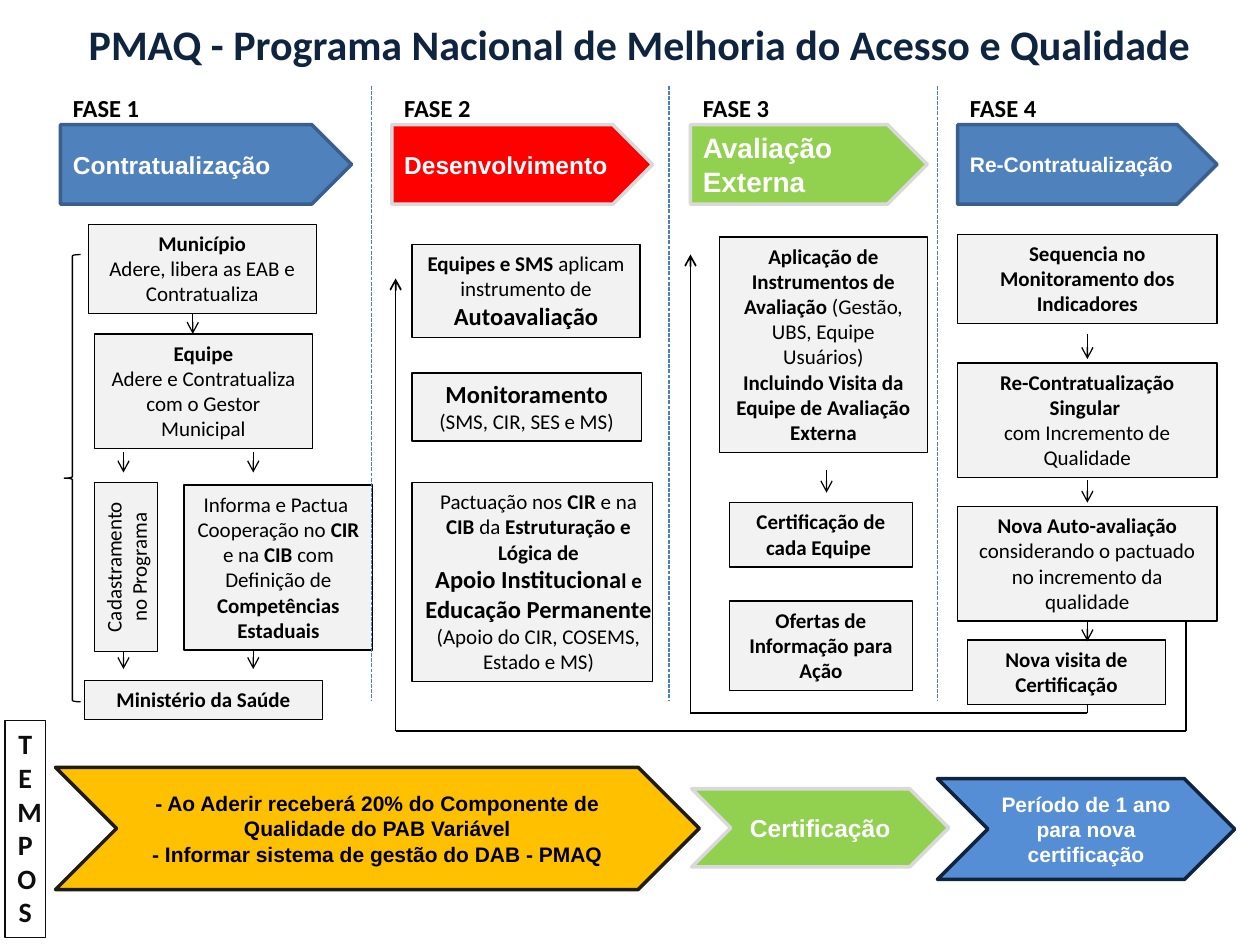
from itertools import pairwise

from lxml.etree import SubElement
from pptx import Presentation
from pptx.dml.color import RGBColor
from pptx.enum.dml import MSO_LINE
from pptx.enum.shapes import MSO_CONNECTOR, MSO_SHAPE
from pptx.enum.text import MSO_ANCHOR, MSO_AUTO_SIZE, PP_ALIGN
from pptx.oxml.ns import qn
from pptx.util import Inches, Pt

BLACK = RGBColor(0x00, 0x00, 0x00)
NEAR_BLACK = RGBColor(0x0D, 0x0D, 0x0D)
WHITE = RGBColor(0xFF, 0xFF, 0xFF)
PALE_GRAY = RGBColor(0xF2, 0xF2, 0xF2)
EDGE_GRAY = RGBColor(0xD9, 0xD9, 0xD9)
NAVY = RGBColor(0x0F, 0x24, 0x3E)
BLUE = RGBColor(0x4F, 0x81, 0xBD)
EDGE_BLUE = RGBColor(0x3A, 0x5F, 0x8C)
DASH_BLUE = RGBColor(0x4B, 0x7E, 0xBC)
SKY_BLUE = RGBColor(0x55, 0x8E, 0xD5)
RED = RGBColor(0xFF, 0x00, 0x00)
GREEN = RGBColor(0x92, 0xD0, 0x50)
AMBER = RGBColor(0xFF, 0xC0, 0x00)
EDGE_BROWN = RGBColor(0x1E, 0x1C, 0x11)


def bold(text, size=12):
    return text, True, size


def plain(text, size=12):
    return text, False, size


class SlideBuilder:
    body_font = "Calibri"
    arrow_font = "Arial"
    thin = 0.75

    def __init__(self, slide):
        self.slide = slide

    def add_text(self, shape, paragraphs, font, color, align=PP_ALIGN.CENTER):
        """Fill a shape with paragraphs, each a list of (text, bold, size) runs."""
        frame = shape.text_frame
        for index, runs in enumerate(paragraphs):
            paragraph = frame.add_paragraph() if index else frame.paragraphs[0]
            paragraph.alignment = align
            paragraph.font.name = font
            paragraph.font.color.rgb = color
            same_weight = len({run[1] for run in runs}) == 1
            same_size = len({run[2] for run in runs}) == 1
            if same_weight:
                paragraph.font.bold = runs[0][1]
            if same_size:
                paragraph.font.size = Pt(runs[0][2])
            for text, is_bold, size in runs:
                run = paragraph.add_run()
                run.text = text
                if not same_weight:
                    run.font.bold = is_bold
                if not same_size:
                    run.font.size = Pt(size)

    def shape(self, kind, area, fill, edge, width):
        shape = self.slide.shapes.add_shape(kind, *map(Inches, area))
        shape.shadow.inherit = False
        if fill is None:
            shape.fill.background()
        else:
            shape.fill.solid()
            shape.fill.fore_color.rgb = fill
        shape.line.color.rgb = edge
        shape.line.width = Pt(width)
        return shape

    def box(self, area, *paragraphs, fill=PALE_GRAY, color=BLACK):
        shape = self.shape(MSO_SHAPE.RECTANGLE, area, fill, color, self.thin)
        shape.text_frame.vertical_anchor = MSO_ANCHOR.TOP
        shape.text_frame.word_wrap = True
        shape.text_frame.auto_size = MSO_AUTO_SIZE.SHAPE_TO_FIT_TEXT
        self.add_text(shape, paragraphs, self.body_font, color)
        return shape

    def block_arrow(self, kind, area, fill, edge, *paragraphs, color=WHITE, align=PP_ALIGN.CENTER):
        shape = self.shape(kind, area, fill, edge, 2)
        shape.text_frame.word_wrap = True
        self.add_text(shape, paragraphs, self.arrow_font, color, align)

    def label(self, area, run, color=BLACK, align=PP_ALIGN.LEFT, wrap=False):
        shape = self.slide.shapes.add_textbox(*map(Inches, area))
        shape.text_frame.word_wrap = wrap
        shape.text_frame.auto_size = MSO_AUTO_SIZE.SHAPE_TO_FIT_TEXT
        self.add_text(shape, [[run]], self.body_font, color, align)

    def line(self, start, end, color=BLACK, width=thin, arrow=False, dashed=False):
        connector = self.slide.shapes.add_connector(
            MSO_CONNECTOR.STRAIGHT, *map(Inches, (*start, *end)))
        connector.line.color.rgb = color
        connector.line.width = Pt(width)
        if dashed:
            connector.line.dash_style = MSO_LINE.SQUARE_DOT
        properties = connector._element.spPr
        if arrow:
            SubElement(properties.find(qn("a:ln")), qn("a:tailEnd"), type="arrow")
        SubElement(properties, qn("a:effectLst"))
        return connector

    def down_arrow(self, x, top, bottom):
        return self.line((x, top), (x, bottom), arrow=True)

    def return_route(self, *points):
        """Draw a bent route whose last leg carries the arrowhead."""
        for start, end in pairwise(points):
            self.line(start, end, width=1, arrow=end == points[-1])


def main():
    presentation = Presentation()
    presentation.slide_width, presentation.slide_height = Inches(10), Inches(7.5)
    builder = SlideBuilder(presentation.slides.add_slide(presentation.slide_layouts[6]))

    builder.label((0.35, 0.1, 9.45, 0.51),
                  bold("PMAQ - Programa Nacional de Melhoria do Acesso e Qualidade", 24),
                  NAVY, PP_ALIGN.CENTER, wrap=True)

    phases = [
        (0.48, 2.31, BLUE, EDGE_BLUE, "Contratualização", 14),
        (3.11, 2.07, RED, EDGE_GRAY, "Desenvolvimento", 14),
        (5.48, 1.88, GREEN, EDGE_GRAY, "Avaliação Externa", 16),
        (7.6, 2.06, BLUE, EDGE_BLUE, "Re-Contratualização", 12),
    ]
    for number, (left, width, fill, edge, name, size) in enumerate(phases, 1):
        builder.label((left, 0.69, 0.73, 0.34), bold(f"FASE {number}", 14))
        builder.block_arrow(MSO_SHAPE.PENTAGON, (left, 0.99, width, 0.63), fill, edge,
                            [bold(name, size)], align=PP_ALIGN.LEFT)

    builder.return_route((9.41, 4.86), (9.41, 5.8), (3.14, 5.8), (3.14, 2.21))
    builder.return_route((8.63, 5.58), (8.63, 5.66), (5.48, 5.66), (5.48, 2.02))

    # Fase 1
    builder.shape(MSO_SHAPE.LEFT_BRACE, (0.51, 2.02, 0.13, 3.55), None, BLACK, builder.thin)
    builder.box((0.7, 1.78, 1.81, 0.71), [bold("Município")],
                [plain("Adere, libera as EAB e Contratualiza")])
    builder.box((0.75, 2.65, 1.73, 0.91), [bold("Equipe")],
                [plain("Adere e Contratualiza com o Gestor Municipal")])
    registration = builder.box((0.33, 4.25, 1.34, 0.5), [plain("Cadastramento no Programa")])
    registration.rotation = 270
    builder.box((1.46, 3.85, 1.5, 1.31),
                [plain("Informa e Pactua  Cooperação no "), bold("CIR "), plain("e na "),
                 bold("CIB "), plain("com Definição de "), bold("Competências Estaduais")])
    builder.box((0.67, 5.4, 1.89, 0.31), [bold("Ministério da Saúde")])
    builder.down_arrow(1.53, 2.49, 2.65)
    for x in (0.98, 2.01):
        builder.down_arrow(x, 3.59, 3.75)
        builder.down_arrow(x, 5.17, 5.31)

    # Fase 2
    builder.box((3.27, 1.94, 1.81, 0.74),
                [bold("Equipes e SMS "), plain("aplicam instrumento de")],
                [bold("Autoavaliação", 14)])
    builder.box((3.27, 2.96, 1.82, 0.54), [bold("Monitoramento", 14)],
                [plain("(SMS, CIR, SES e MS)")])
    agreement = builder.box(
        (3.27, 3.83, 1.91, 1.58),
        [plain("Pactuação nos "), bold("CIR "), plain("e na "), bold("CIB "), plain("da"),
         bold(" Estruturação e Lógica de")],
        [bold("Apoio Instituciona", 14), bold("l e "), bold("Educação Permanente", 14)],
        [plain("(Apoio do CIR, COSEMS, Estado e MS)")])
    agreement.text_frame.margin_right = 0

    # Fase 3
    builder.box((5.71, 1.88, 1.65, 1.71),
                [bold("Aplicação de Instrumentos de Avaliação "),
                 plain("(Gestão, UBS, Equipe Usuários)")],
                [bold("Incluindo Visita da Equipe de Avaliação Externa")])
    builder.box((5.79, 3.99, 1.45, 0.51), [bold("Certificação de cada Equipe ")])
    builder.box((5.79, 4.77, 1.45, 0.71), [bold("Ofertas de Informação para Ação")])
    builder.down_arrow(6.56, 3.73, 3.91)

    # Fase 4
    builder.box((7.6, 1.86, 2.06, 0.71), [bold("Sequencia no Monitoramento dos Indicadores")])
    builder.box((7.6, 2.88, 2.06, 0.91), [bold("Re-Contratualização Singular ")],
                [plain("com Incremento de Qualidade")])
    self_assessment = builder.box(
        (7.6, 4.02, 2.06, 0.91),
        [bold("Nova Auto-avaliação "),
         plain("considerando o pactuado no incremento da qualidade")])
    builder.box((7.68, 5.08, 1.57, 0.51), [bold("Nova visita de Certificação")])
    builder.down_arrow(8.63, 2.65, 2.85)
    builder.down_arrow(8.63, 3.81, 3.99)
    builder.down_arrow(8.63, 4.93, 5.09).begin_connect(self_assessment, 2)

    for x in (2.95, 5.31, 7.44):
        builder.line((x, 0.68), (x, 5.56), DASH_BLUE, dashed=True)

    # Tempos
    builder.box((0.04, 5.72, 0.32, 1.72), [bold("TEMPOS", 16)], fill=None, color=NEAR_BLACK)
    builder.block_arrow(
        MSO_SHAPE.CHEVRON, (0.44, 6.09, 5.11, 0.97), AMBER, EDGE_BROWN,
        [bold("- Ao Aderir receberá 20% do Componente de Qualidade do PAB Variável")],
        [bold("- Informar sistema de gestão do DAB - PMAQ")], color=BLACK)
    builder.block_arrow(MSO_SHAPE.CHEVRON, (7.44, 6.18, 2.36, 0.8), SKY_BLUE, NAVY,
                        [bold("Período de 1 ano para nova certificação")])
    builder.block_arrow(MSO_SHAPE.CHEVRON, (5.49, 6.26, 2.04, 0.62), GREEN, EDGE_GRAY,
                        [bold("Certificação", 14)])

    presentation.save("out.pptx")


if __name__ == "__main__":
    main()
